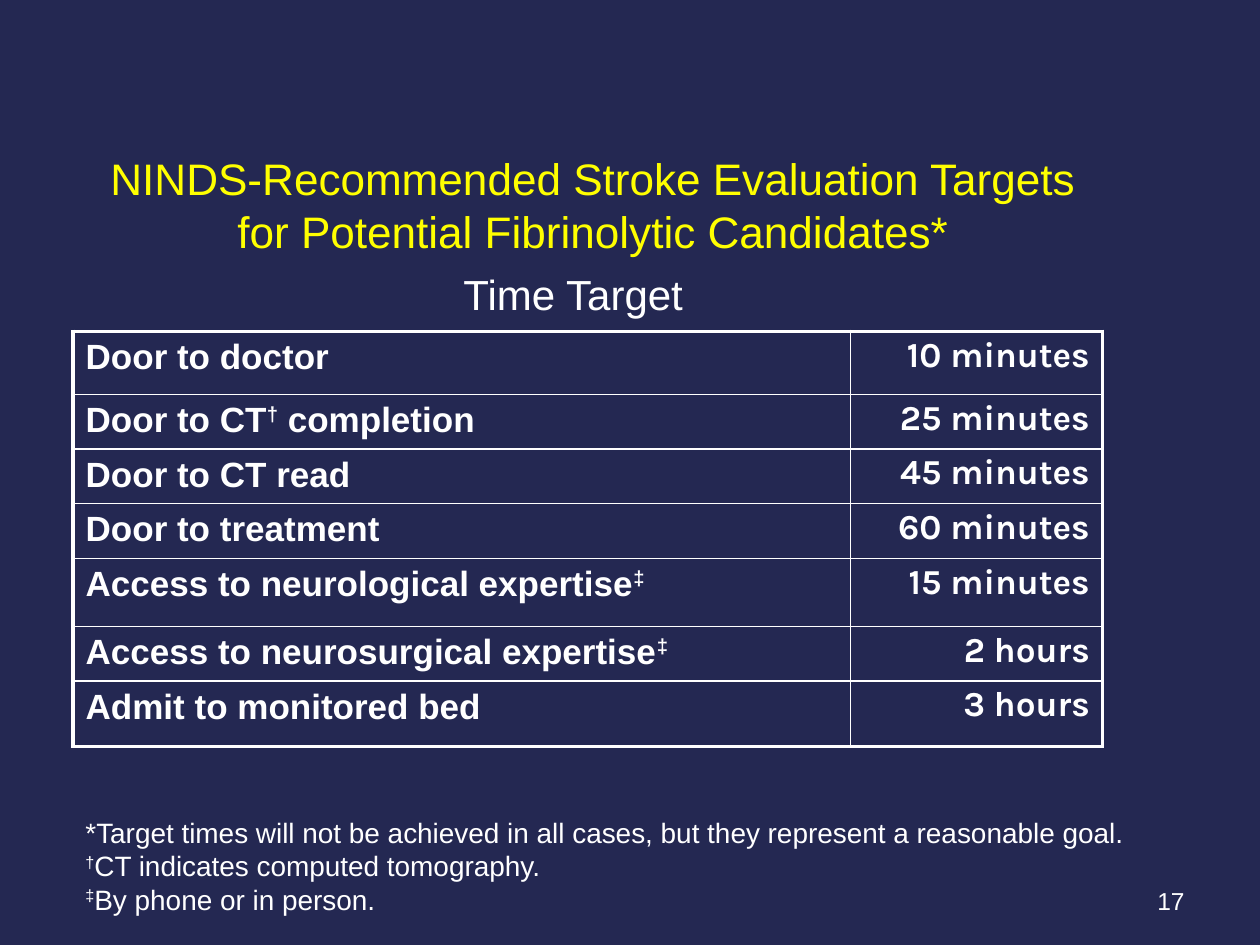
"""Build the stroke evaluation time targets slide."""
from lxml import etree
from pptx import Presentation
from pptx.dml.color import RGBColor
from pptx.enum import text
from pptx.oxml import ns
from pptx.util import Inches, Pt

WHITE, YELLOW, NAVY = "FFFFFF", "FFFF00", "242852"
MARKS = "†‡"
TITLE = "NINDS-Recommended Stroke Evaluation Targets for Potential Fibrinolytic Candidates*"
TARGETS = [
    (["Door to doctor"], "10 minutes", 0.5),
    (["Door to CT", "†", " completion"], "25 minutes", 0.43),
    (["Door to CT read"], "45 minutes", 0.43),
    (["Door to treatment"], "60 minutes", 0.43),
    (["Access to neurological expertise", "‡"], "15 minutes", 0.54),
    (["Access to neurosurgical expertise", "‡"], "2 hours", 0.43),
    (["Admit to monitored bed"], "3 hours", 0.52),
]
FOOTNOTES = [
    ["*Target times will not be achieved in all cases, but they represent a reasonable goal."],
    ["†", "CT indicates computed tomography."],
    ["‡", "By phone or in person."],
]
COLUMNS = [6.17, 2]
LEFT, CENTER, RIGHT = text.PP_ALIGN.LEFT, text.PP_ALIGN.CENTER, text.PP_ALIGN.RIGHT
MIDDLE, TOP = text.MSO_ANCHOR.MIDDLE, text.MSO_ANCHOR.TOP


def rgb(color):
    return RGBColor.from_string(color)


def write(frame, lines, size, color=WHITE, font="Arial", bold=False, align=LEFT,
          before=0, after=0, spacing=None):
    paragraph = frame.paragraphs[0]
    paragraph.alignment = align
    paragraph.space_before, paragraph.space_after = Pt(before), Pt(after)
    paragraph.line_spacing = spacing
    for number, line in enumerate(lines):
        if number:
            paragraph.add_line_break()
        for words in line:
            run = paragraph.add_run()
            run.text = words
            run.font.name, run.font.size, run.font.bold = font, Pt(size), bold
            run.font.color.rgb = rgb(color)
            if words in MARKS:
                run._r.get_or_add_rPr().set("baseline", "30000")


def add_text(slide, box, lines, size, anchor=TOP, wrap=True, **style):
    frame = slide.shapes.add_textbox(*map(Inches, box)).text_frame
    frame.word_wrap = wrap
    frame.vertical_anchor = anchor
    write(frame, lines, size, **style)


def set_borders(cell, widths):
    properties = cell._tc.get_or_add_tcPr()
    for side, width in widths.items():
        line = etree.SubElement(properties, ns.qn(f"a:ln{side}"), w=str(Pt(width)))
        fill = etree.SubElement(line, ns.qn("a:solidFill"))
        etree.SubElement(fill, ns.qn("a:srgbClr"), val=WHITE)


def add_targets(slide):
    heights = [height for _, _, height in TARGETS]
    box = map(Inches, (0.58, 2.63, sum(COLUMNS), sum(heights)))
    table = slide.shapes.add_table(len(TARGETS), len(COLUMNS), *box).table
    table.first_row = table.horz_banding = False
    for column, width in zip(table.columns, COLUMNS):
        column.width = Inches(width)
    last = len(TARGETS) - 1
    for number, (step, target, height) in enumerate(TARGETS):
        table.rows[number].height = Inches(height)
        step_cell, target_cell = table.rows[number].cells
        write(step_cell.text_frame, [step], 20, bold=True, before=5, after=5)
        write(target_cell.text_frame, [[target]], 20, font="Karla", bold=True,
              align=RIGHT, before=4, spacing=0.9)
        for cell in (step_cell, target_cell):
            outer = {"L": cell is step_cell, "R": cell is target_cell,
                     "T": number == 0, "B": number == last}
            set_borders(cell, {side: 2.25 if edge else 1 for side, edge in outer.items()})
            cell.fill.background()


def main():
    deck = Presentation()
    deck.slide_width, deck.slide_height = Inches(10), Inches(7.5)
    slide = deck.slides.add_slide(deck.slide_layouts[6])
    slide.background.fill.solid()
    slide.background.fill.fore_color.rgb = rgb(NAVY)
    add_text(slide, (7.17, 6.95, 2.33, 0.4), [["17"]], 14, MIDDLE, align=RIGHT)
    add_text(slide, (0.58, 1.25, 8.25, 0.75), [[TITLE]], 25.2, MIDDLE,
             color=YELLOW, align=CENTER)
    add_targets(slide)
    add_text(slide, (0.58, 6.42, 8.83, 1.37), FOOTNOTES, 16, before=5, after=5)
    add_text(slide, (3.58, 2.08, 2.09, 0.5), [["Time Target"]], 24, wrap=False)
    deck.save("out.pptx")


if __name__ == "__main__":
    main()
